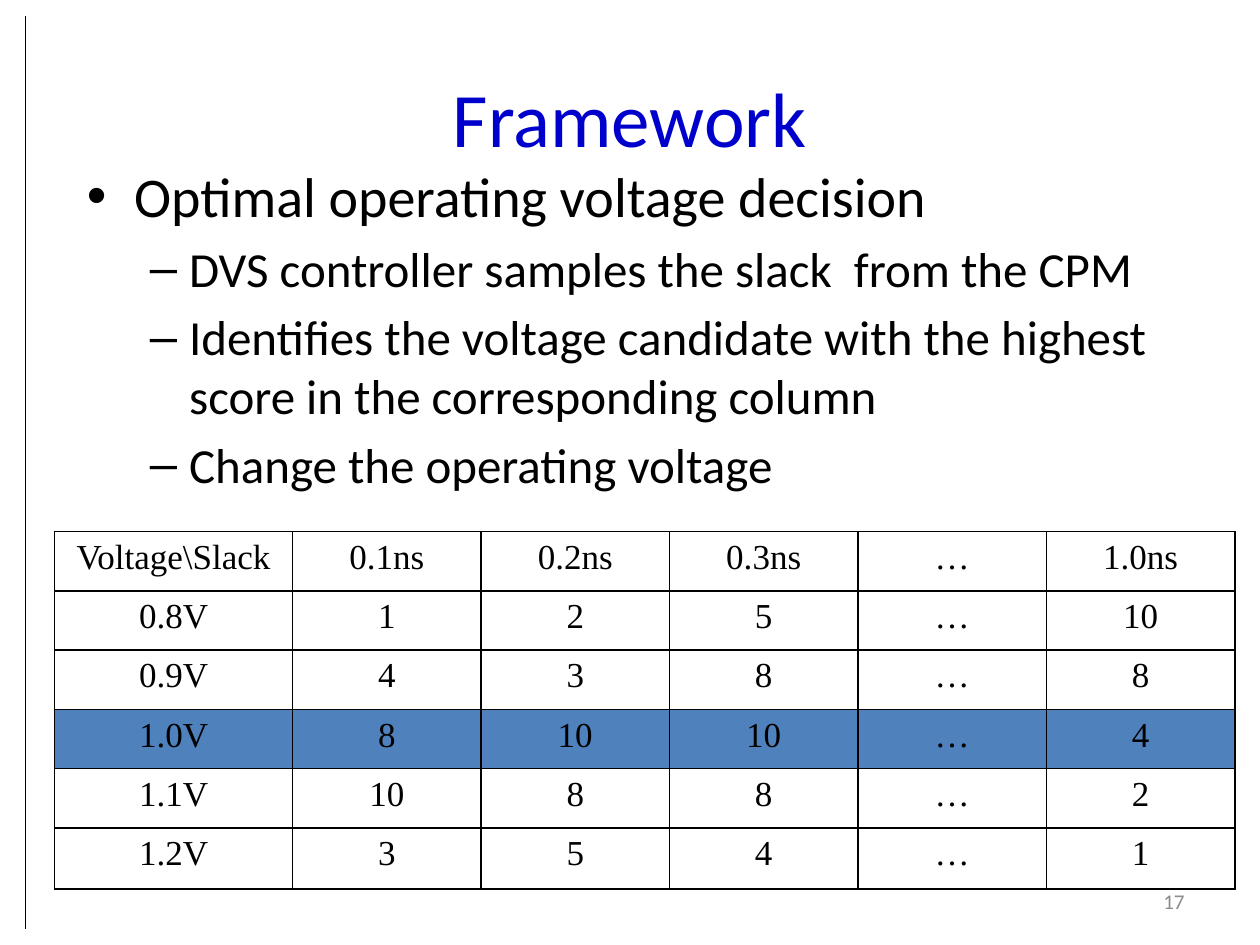
"""Build the Framework slide with its voltage and slack score table."""
from lxml.etree import SubElement
from pptx import Presentation
from pptx.dml.color import RGBColor
from pptx.enum.shapes import MSO_CONNECTOR
from pptx.enum.text import MSO_ANCHOR, PP_ALIGN
from pptx.oxml.ns import qn
from pptx.util import Pt

TITLE = "Framework"
PAGE = "17"
BULLETS = [
    (0, "Optimal operating voltage decision"),
    (1, "DVS controller samples the slack  from the CPM"),
    (1, "Identifies the voltage candidate with the highest score in the corresponding column"),
    (1, "Change the operating voltage"),
]
SCORES = [
    ("Voltage\\Slack", "0.1ns", "0.2ns", "0.3ns", "…", "1.0ns"),
    ("0.8V", "1", "2", "5", "…", "10"),
    ("0.9V", "4", "3", "8", "…", "8"),
    ("1.0V", "8", "10", "10", "…", "4"),
    ("1.1V", "10", "8", "8", "…", "2"),
    ("1.2V", "3", "5", "4", "…", "1"),
]
HIGHLIGHT = "1.0V"
THEME = {
    "ink": "000000", "paper": "FFFFFF", "accent": "4F81BD",
    "title": {"name": "Calibri", "size": Pt(44), "color": "0000CC"},
    "body": [{"name": "Calibri", "size": Pt(n), "color": "000000"} for n in (32, 28)],
    "page": {"name": "Calibri", "size": Pt(12), "color": "8C8C8C"},
    "cell": {"name": "Times New Roman", "size": Pt(20), "color": "000000"},
}
LEVELS = [
    {"char": "•", "left": 27, "hang": 27},
    {"char": "–", "left": 58.5, "hang": 22.5},
]
BOXES = {
    "title": (36, 21.6, 648, 90),
    "body": (42.5, 88.5, 635, 384),
    "page": (516, 500.5, 168, 28.75),
    "table": (31.2, 303.8, 674.5, 204),
}
FIRST_COL, COL, ROW, LAST_ROW = 136, 107.7, 33.9, 34.9


def place(name):
    return [Pt(v) for v in BOXES[name]]


def write(p, text, style, align):
    r = p.add_run()
    r.text = text
    p.alignment = align
    for key, value in style.items():
        if key == "color":
            r.font.color.rgb = RGBColor.from_string(value)
        else:
            setattr(r.font, key, value)


def add_text(s, name, anchor):
    sp = s.shapes.add_textbox(*place(name))
    tf = sp.text_frame
    tf.word_wrap = True
    tf.vertical_anchor = anchor
    return tf


def add_title(s):
    sp = s.shapes.title
    for key, value in zip(("left", "top", "width", "height"), place("title")):
        setattr(sp, key, value)
    sp.text_frame.vertical_anchor = MSO_ANCHOR.MIDDLE
    write(sp.text_frame.paragraphs[0], TITLE, THEME["title"], PP_ALIGN.CENTER)


def add_bullets(s):
    tf = add_text(s, "body", MSO_ANCHOR.TOP)
    for i, (level, text) in enumerate(BULLETS):
        p = tf.add_paragraph() if i else tf.paragraphs[0]
        style, indent = THEME["body"][level], LEVELS[level]
        p.level = level
        p.space_before = Pt(style["size"].pt * 0.2)
        write(p, text, style, PP_ALIGN.LEFT)
        pPr = p._p.get_or_add_pPr()
        pPr.set("marL", str(Pt(indent["left"])))
        pPr.set("indent", str(-Pt(indent["hang"])))
        SubElement(pPr, qn("a:buFont"), typeface="Arial")
        SubElement(pPr, qn("a:buChar"), char=indent["char"])


def add_borders(cell):
    tcPr = cell._tc.get_or_add_tcPr()
    for i, side in enumerate(("lnL", "lnR", "lnT", "lnB")):
        ln = tcPr.makeelement(qn(f"a:{side}"), {"w": str(Pt(1))})
        fill = SubElement(ln, qn("a:solidFill"))
        SubElement(fill, qn("a:srgbClr"), val=THEME["ink"])
        tcPr.insert(i, ln)


def add_scores(s):
    shape = s.shapes.add_table(len(SCORES), len(SCORES[0]), *place("table"))
    table = shape.table
    table.first_row = table.horz_banding = False
    for i, col in enumerate(table.columns):
        col.width = Pt(COL if i else FIRST_COL)
    for i, (row, values) in enumerate(zip(table.rows, SCORES), 1):
        row.height = Pt(ROW if i < len(SCORES) else LAST_ROW)
        color = THEME["accent" if values[0] == HIGHLIGHT else "paper"]
        for cell, text in zip(row.cells, values):
            cell.fill.solid()
            cell.fill.fore_color.rgb = RGBColor.from_string(color)
            write(cell.text_frame.paragraphs[0], text, THEME["cell"], PP_ALIGN.CENTER)
            add_borders(cell)


def add_rule(s):
    line = s.shapes.add_connector(MSO_CONNECTOR.STRAIGHT, Pt(14.4), Pt(9.4), Pt(14.4), Pt(530.6))
    line.line.color.rgb = RGBColor.from_string(THEME["ink"])
    line.line.width = Pt(0.75)
    SubElement(line._element.spPr, qn("a:effectLst"))


def main():
    prs = Presentation()
    prs.slide_width, prs.slide_height = Pt(720), Pt(540)
    s = prs.slides.add_slide(prs.slide_layouts[5])
    add_rule(s)
    add_title(s)
    add_bullets(s)
    tf = add_text(s, "page", MSO_ANCHOR.MIDDLE)
    write(tf.paragraphs[0], PAGE, THEME["page"], PP_ALIGN.RIGHT)
    add_scores(s)
    prs.save("out.pptx")


if __name__ == "__main__":
    main()
